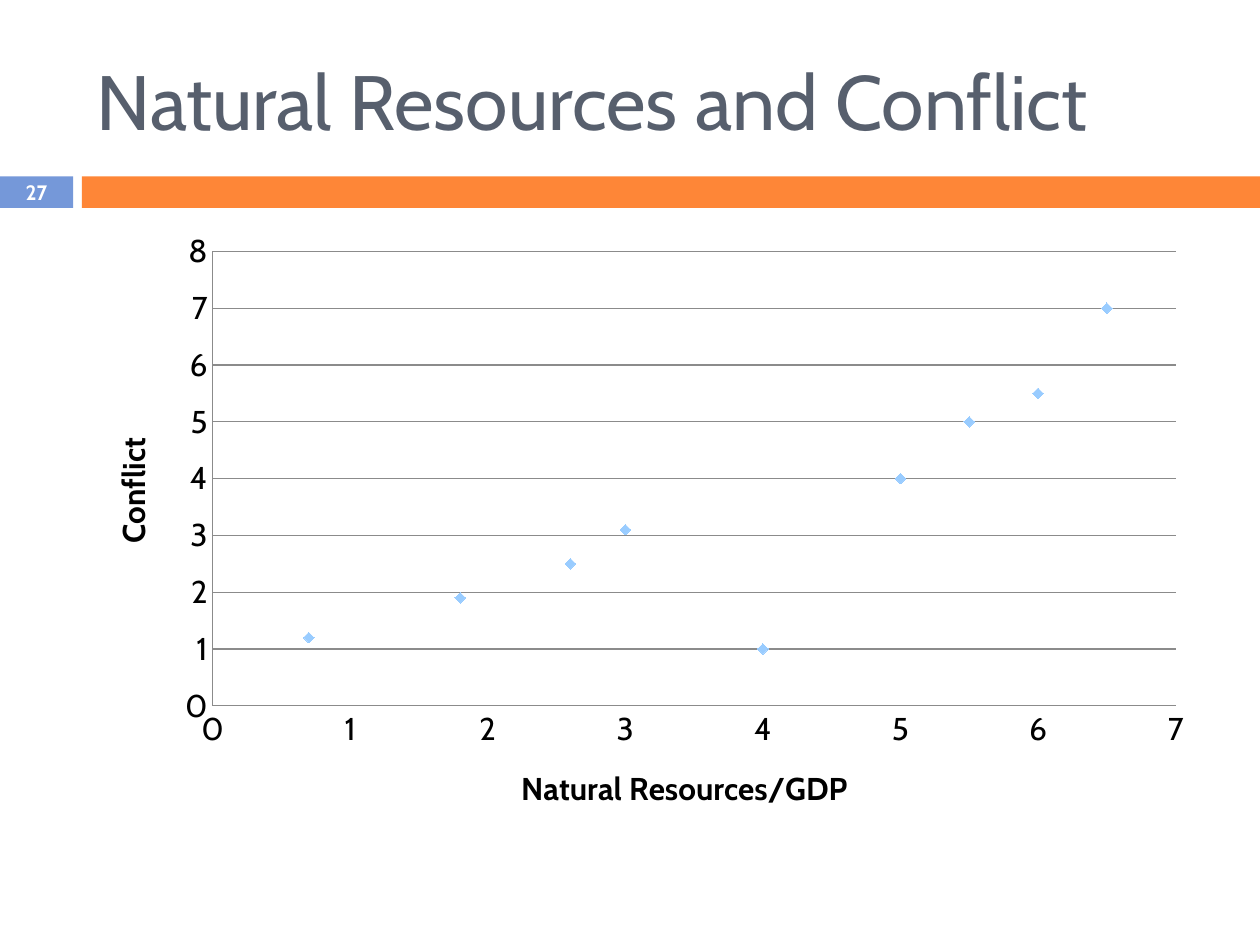
from dataclasses import dataclass

from lxml import etree
from pptx import Presentation
from pptx import util as u
from pptx.chart.data import XyChartData
from pptx.dml.color import RGBColor
from pptx.enum import chart as charts, shapes, text


@dataclass(frozen=True)
class Theme:
    font: str = "Cabin"
    title_color: str = "575F6D"
    blue: str = "7598D9"
    orange: str = "FE8637"
    marker: str = "99CCFF"
    grid: str = "8B8B8B"
    white: str = "FFFFFF"
    black: str = "000000"
    title_size: float = 44
    chart_size: float = 18
    number_size: float = 11.9


THEME = Theme()
WIDTH, HEIGHT = 10, 7.5
CONTENT_LEFT, CONTENT_WIDTH = 0.67, 8.92
BAND_TOP, BAND_HEIGHT = 1.4, 0.25
NUMBER_WIDTH, BAND_LEFT = 0.58, 0.65
POINTS = [(0.7, 1.2), (1.8, 1.9), (2.6, 2.5), (3, 3.1), (4, 1),
          (5, 4), (5.5, 5), (6, 5.5), (6.5, 7)]
PLOT_SHARES = {"x": 0.114, "y": 0.05, "w": 0.857, "h": 0.733}


def box(*lengths):
    return [u.Inches(length) for length in lengths]


def style_font(font, size, color, bold=False):
    font.name, font.size, font.bold = THEME.font, u.Pt(size), bold
    font.color.rgb = RGBColor.from_string(color)


def add_band(slide, left, width, color):
    shape = slide.shapes.add_shape(
        shapes.MSO_SHAPE.RECTANGLE, *box(left, BAND_TOP, width, BAND_HEIGHT))
    shape.shadow.inherit = False
    shape.fill.solid()
    shape.fill.fore_color.rgb = RGBColor.from_string(color)
    shape.line.fill.background()


def add_text(slide, position, wording, size, color, bold=False,
             alignment=text.PP_ALIGN.LEFT, inset=0.1):
    frame = slide.shapes.add_textbox(*box(*position)).text_frame
    frame.word_wrap = True
    frame.vertical_anchor = text.MSO_ANCHOR.MIDDLE
    frame.margin_left = frame.margin_right = u.Inches(inset)
    frame.margin_top = frame.margin_bottom = u.Inches(inset / 2)
    paragraph = frame.paragraphs[0]
    paragraph.alignment = alignment
    run = paragraph.add_run()
    run.text = wording
    style_font(run.font, size, color, bold)


def style_line(line):
    line.color.rgb = RGBColor.from_string(THEME.grid)
    line.width = u.Pt(0.75)


def style_axis(axis, title, maximum, gridlines):
    axis.minimum_scale, axis.maximum_scale, axis.major_unit = 0, maximum, 1
    axis.major_tick_mark = axis.minor_tick_mark = charts.XL_TICK_MARK.NONE
    axis.has_major_gridlines = gridlines
    if gridlines:
        style_line(axis.major_gridlines.format.line)
    style_line(axis.format.line)
    axis.tick_labels.number_format = "General"
    axis.tick_labels.number_format_is_linked = False
    run = axis.axis_title.text_frame.paragraphs[0].add_run()
    run.text = title
    style_font(run.font, THEME.chart_size, THEME.black, bold=True)


def place_plot(chart):
    plot_area = chart.plots[0]._element.getparent()
    namespace = "{" + plot_area.nsmap["c"] + "}"
    for layout in plot_area.findall(namespace + "layout"):
        plot_area.remove(layout)
    layout = etree.Element(namespace + "layout")
    plot_area.insert(0, layout)
    manual = etree.SubElement(layout, namespace + "manualLayout")
    settings = {"layoutTarget": "inner", "xMode": "edge", "yMode": "edge", **PLOT_SHARES}
    for name, value in settings.items():
        etree.SubElement(manual, namespace + name, val=str(value))


def add_scatter(slide, position):
    data = XyChartData()
    series_data = data.add_series("Series 1")
    for x, y in POINTS:
        series_data.add_data_point(x, y)
    chart = slide.shapes.add_chart(
        charts.XL_CHART_TYPE.XY_SCATTER, *box(*position), data).chart
    chart.has_title = chart.has_legend = False
    style_font(chart.font, THEME.chart_size, THEME.black)
    style_axis(chart.category_axis, "Natural Resources/GDP", 7, False)
    style_axis(chart.value_axis, "Conflict", 8, True)
    plot = chart.plots[0]
    plot.vary_by_categories = False
    series = plot.series[0]
    series.format.line.fill.background()
    marker = series.marker
    marker.style, marker.size = charts.XL_MARKER_STYLE.DIAMOND, 6
    marker.format.fill.solid()
    marker.format.fill.fore_color.rgb = RGBColor.from_string(THEME.marker)
    marker.format.line.fill.background()
    place_plot(chart)


def main():
    presentation = Presentation()
    presentation.slide_width, presentation.slide_height = box(WIDTH, HEIGHT)
    slide = presentation.slides.add_slide(presentation.slide_layouts[6])
    add_band(slide, 0, NUMBER_WIDTH, THEME.blue)
    add_band(slide, BAND_LEFT, WIDTH - BAND_LEFT, THEME.orange)
    add_text(slide, (CONTENT_LEFT, 0.25, CONTENT_WIDTH, 1.08),
             "Natural Resources and Conflict", THEME.title_size, THEME.title_color)
    add_scatter(slide, (CONTENT_LEFT, 1.75, CONTENT_WIDTH, 4.92))
    add_text(slide, (0, 1.39, NUMBER_WIDTH, 0.27), "27", THEME.number_size,
             THEME.white, bold=True, alignment=text.PP_ALIGN.CENTER, inset=0)
    presentation.save("out.pptx")


if __name__ == "__main__":
    main()
